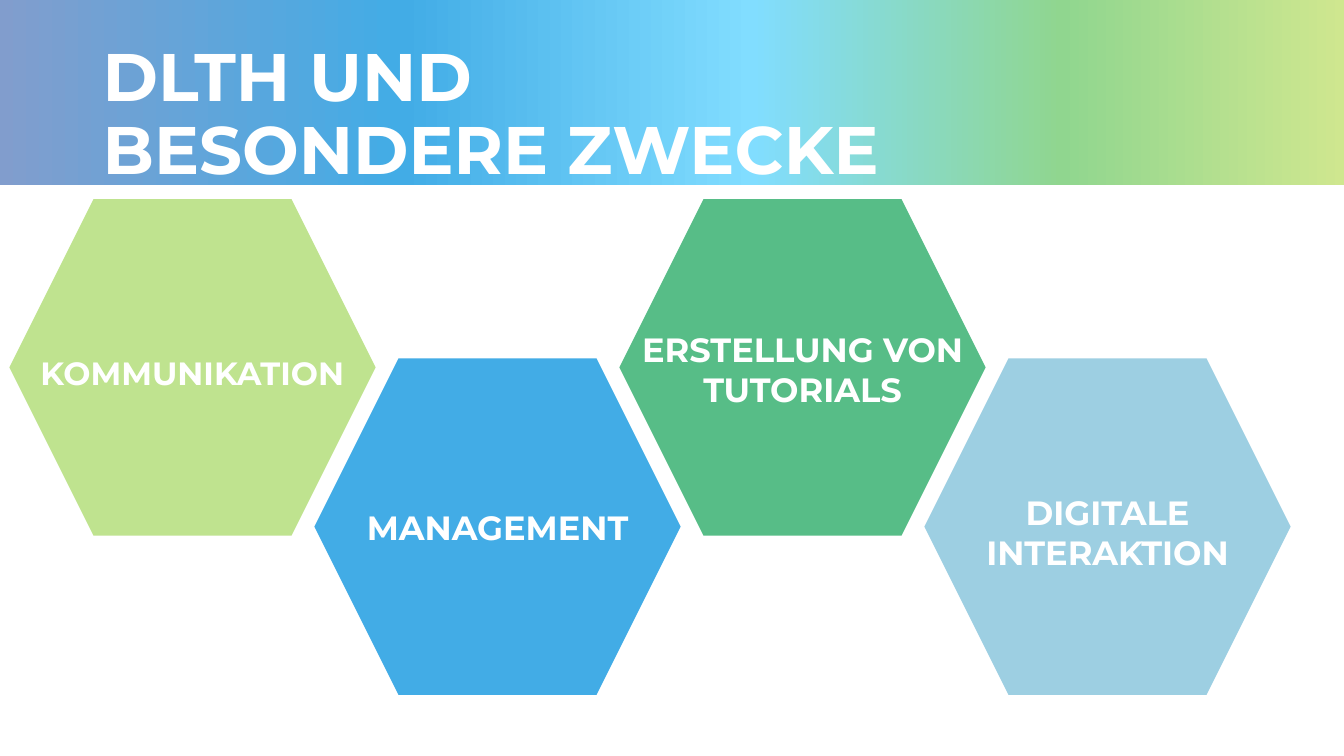
import pptx
import pptx.util
import pptx.dml.color
import pptx.enum.shapes
import pptx.enum.text
import pptx.oxml
import pptx.oxml.ns
from lxml import etree

TITLE = "DLTH UND\vBESONDERE ZWECKE"
FONT = "Montserrat"
COLORS = {
    "white": "FFFFFF",
    "lime": "BFE38F",
    "blue": "42ACE6",
    "green": "57BD87",
    "pale": "9DCFE2",
}
BANNER_STOPS = [(0, "819DCD"), (30, "42ACE6"), (56, "81DDFF"), (79, "90D68F"), (100, "CFE78F")]
PURPOSES = [
    {"text": "KOMMUNIKATION", "color": "lime", "size": 23, "drop": 1.38, "height": 0.49, "extra": 0.1},
    {"text": "MANAGEMENT", "color": "blue", "size": 24, "drop": 1.32, "height": 0.5, "extra": 0},
    {"text": "ERSTELLUNG VON TUTORIALS", "color": "green", "size": 24, "drop": 1.13, "height": 0.91, "extra": 0},
    {"text": "DIGITALE INTERAKTION", "color": "pale", "size": 24, "drop": 1.17, "height": 0.91, "extra": 0},
]
HEX_LEFT, HEX_STEP = 0.21, 3.025
HEX_TOPS = (2.08, 3.66)
HEX_W, HEX_H = 3.4, 3.13


def rgb(name):
    return pptx.dml.color.RGBColor.from_string(COLORS[name])


def box(*lengths):
    return [pptx.util.Inches(length) for length in lengths]


def add_shape(s, kind, *lengths):
    sp = s.shapes.add_shape(kind, *box(*lengths))
    sp.shadow.inherit = False
    return sp


def add_text(s, text, size, *lengths):
    sp = s.shapes.add_textbox(*box(*lengths))
    tf = sp.text_frame
    tf.word_wrap = True
    tf.text = text
    p = tf.paragraphs[0]
    for r in p.runs:
        r.font.size = pptx.util.Pt(size)
        r.font.name = FONT
        r.font.bold = True
        r.font.color.rgb = rgb("white")
    return tf, p


def add_banner(s):
    sp = add_shape(s, pptx.enum.shapes.MSO_SHAPE.RECTANGLE, 0, -0.08, 13.33, 1.92)
    sp.line.fill.background()
    sp.fill.gradient()
    sp.fill.gradient_angle = 0
    qn = pptx.oxml.ns.qn
    stops = sp.element.spPr.find(qn("a:gradFill")).find(qn("a:gsLst"))
    for stop in list(stops):
        stops.remove(stop)
    for percent, color in BANNER_STOPS:
        stop = etree.SubElement(stops, qn("a:gs"), pos=str(percent * 1000))
        etree.SubElement(stop, qn("a:srgbClr"), val=color)


def add_hexagon(s, left, top, color):
    sp = add_shape(s, pptx.enum.shapes.MSO_SHAPE.HEXAGON, left, top, HEX_W, HEX_H)
    sp.adjustments[0] = 0.25
    sp.fill.solid()
    sp.fill.fore_color.rgb = rgb(color)
    sp.line.color.rgb = rgb(color)
    sp.line.width = pptx.util.Pt(15)
    qn = pptx.oxml.ns.qn
    etree.SubElement(sp.element.spPr.find(qn("a:ln")), qn("a:miter"), lim="800000")


def main():
    prs = pptx.Presentation()
    prs.slide_width, prs.slide_height = box(13.33, 7.5)
    s = prs.slides.add_slide(prs.slide_layouts[6])

    add_banner(s)
    tf, p = add_text(s, TITLE, 48, 0.92, 0.32, 11.5, 1.67)
    tf.vertical_anchor = pptx.enum.text.MSO_ANCHOR.MIDDLE
    p.line_spacing = 0.9

    places = [(HEX_LEFT + i * HEX_STEP, HEX_TOPS[i % 2]) for i in range(len(PURPOSES))]
    for item, (left, top) in zip(PURPOSES, places):
        add_hexagon(s, left, top, item["color"])
    for item, (left, top) in zip(PURPOSES, places):
        tf, p = add_text(s, item["text"], item["size"], left - item["extra"] / 2,
                         top + item["drop"], HEX_W + item["extra"], item["height"])
        tf.auto_size = pptx.enum.text.MSO_AUTO_SIZE.SHAPE_TO_FIT_TEXT
        p.alignment = pptx.enum.text.PP_ALIGN.CENTER

    prs.save("out.pptx")


if __name__ == "__main__":
    main()
